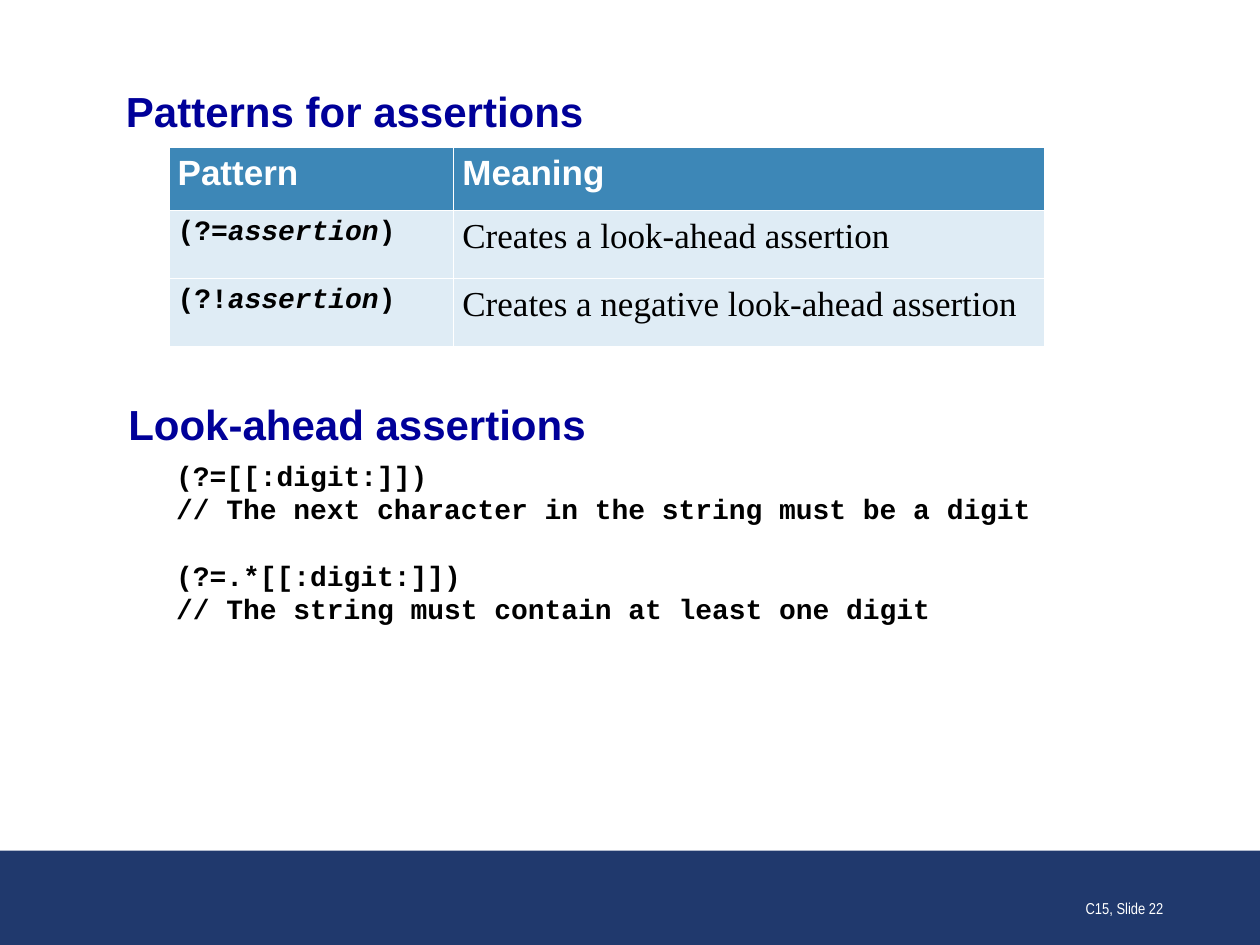
"""Build the slide on regular expression assertions."""
from pptx import Presentation, util as u
from pptx.dml.color import RGBColor
from pptx.enum import shapes, text

NAVY = RGBColor(0x20, 0x39, 0x6D)
BLUE = RGBColor(0x00, 0x00, 0x99)
TEAL = RGBColor(0x3D, 0x87, 0xB7)
PALE = RGBColor(0xDF, 0xEC, 0xF5)
BLACK = RGBColor(0, 0, 0)
WHITE = RGBColor(255, 255, 255)

TITLE = "Patterns for assertions"
HEADS = ["Pattern", "Meaning"]
ROWS = [
    (("(?=", "assertion", ")"), "Creates a look-ahead assertion"),
    (("(?!", "assertion", ")"), "Creates a negative look-ahead assertion"),
]
TOPIC = "Look-ahead assertions"
CODE = [
    ("(?=[[:digit:]])", "// The next character in the string must be a digit"),
    ("(?=.*[[:digit:]])", "// The string must contain at least one digit"),
]
FOOT = "C15, Slide 22"
COLS = [2.26, 4.69]
HIGH = [0.5, 0.54, 0.54]
HEAD = ("Arial", 24, BLUE, True)
MONO = ("Courier New", 16, BLACK, True)
PITCH = u.Pt(19)


def style(par, name, size, color, bold=False):
    font = par.font
    font.name, font.size, font.bold = name, u.Pt(size), bold
    font.color.rgb = color


def add_box(slide, left, top, width, height, anchor, pad=True):
    box = slide.shapes.add_textbox(*map(u.Inches, (left, top, width, height)))
    frame = box.text_frame
    frame.word_wrap, frame.vertical_anchor = True, anchor
    if not pad:
        frame.margin_left = frame.margin_right = 0
        frame.margin_top = frame.margin_bottom = 0
    return frame


def add_grid(slide):
    grid = slide.shapes.add_table(
        len(HIGH), len(COLS), u.Inches(1.34), u.Inches(1.17),
        u.Inches(sum(COLS)), u.Inches(sum(HIGH))).table
    for col, width in zip(grid.columns, COLS):
        col.width = u.Inches(width)
    for row, high in zip(grid.rows, HIGH):
        row.height = u.Inches(high)
    looks = [MONO, ("Times New Roman", 20, BLACK)]
    for r, row in enumerate([HEADS, *ROWS]):
        for c, words in enumerate(row):
            cell = grid.cell(r, c)
            cell.margin_left = cell.margin_right = u.Inches(0.07)
            cell.fill.solid()
            cell.fill.fore_color.rgb = PALE if r else TEAL
            par = cell.text_frame.paragraphs[0]
            parts = [words] if isinstance(words, str) else words
            for i, part in enumerate(parts):
                run = par.add_run()
                run.text = part
                if i == 1:
                    run.font.italic = True
            style(par, *(looks[c] if r else ("Arial", 20, WHITE, True)))


def add_code(slide):
    frame = add_box(slide, 0.92, 3.11, 8.08, 2.42, text.MSO_ANCHOR.TOP)
    par = frame.paragraphs[0]
    par.text, par.space_after = TOPIC, u.Pt(6)
    style(par, *HEAD)
    for n, pair in enumerate(CODE):
        for i, line in enumerate(pair):
            par = frame.add_paragraph()
            par.text, par.line_spacing = line, PITCH
            par._p.get_or_add_pPr().set("marL", str(u.Inches(0.38)))
            if n and not i:
                par.space_before = PITCH
            style(par, *MONO)


def main():
    deck = Presentation()
    deck.slide_width, deck.slide_height = u.Inches(10), u.Inches(7.5)
    slide = deck.slides.add_slide(deck.slide_layouts[6])
    band = slide.shapes.add_shape(
        shapes.MSO_SHAPE.RECTANGLE, 0, u.Inches(6.75),
        deck.slide_width, u.Inches(0.75))
    band.shadow.inherit = False
    band.fill.solid()
    band.fill.fore_color.rgb = NAVY
    band.line.fill.background()

    title = add_box(slide, 1, 0.68, 8, 0.4, text.MSO_ANCHOR.MIDDLE, False)
    title.text = TITLE
    style(title.paragraphs[0], *HEAD)
    add_grid(slide)
    add_code(slide)
    foot = add_box(slide, 7.25, 6.83, 2.08, 0.5, text.MSO_ANCHOR.BOTTOM)
    foot.text = FOOT
    foot.paragraphs[0].alignment = text.PP_ALIGN.RIGHT
    style(foot.paragraphs[0], "Arial Narrow", 9, WHITE)
    deck.save("out.pptx")


if __name__ == "__main__":
    main()
